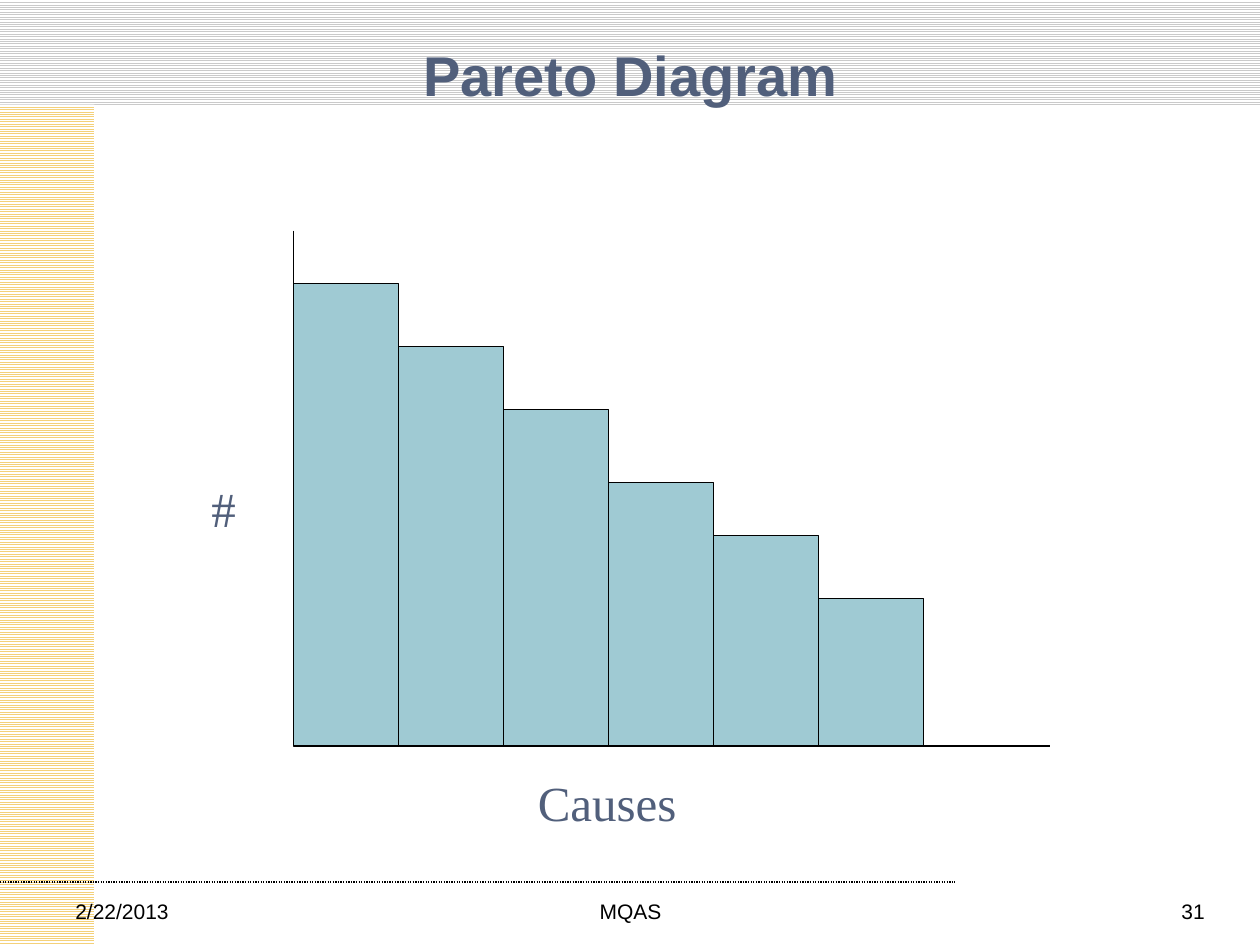
from lxml import etree
from pptx import Presentation
from pptx.dml.color import RGBColor
from pptx.enum.dml import MSO_LINE, MSO_PATTERN
from pptx.enum.shapes import MSO_CONNECTOR, MSO_SHAPE
from pptx.enum.text import MSO_ANCHOR, PP_ALIGN
from pptx.oxml.ns import qn
from pptx.util import Inches, Pt

RECT = MSO_SHAPE.RECTANGLE
STRAIGHT = MSO_CONNECTOR.STRAIGHT
STRIPES = MSO_PATTERN.LIGHT_HORIZONTAL
DOTS = MSO_LINE.ROUND_DOT
LEFT, CENTER, RIGHT = PP_ALIGN.LEFT, PP_ALIGN.CENTER, PP_ALIGN.RIGHT
TOP, MIDDLE = MSO_ANCHOR.TOP, MSO_ANCHOR.MIDDLE
SLATE, BLACK, WHITE, TEAL = "515F7B", "000000", "FFFFFF", "9FCAD3"
SANS, SERIF = "Arial", "Times New Roman"


def color(code):
    return RGBColor.from_string(code)


prs = Presentation()
prs.slide_width, prs.slide_height = Inches(10), Inches(7.5)
slide = prs.slides.add_slide(prs.slide_layouts[6])
shapes = slide.shapes

# Striped bands along the top and left edges
for top, width, height, ink in [(0, 10, 0.83, "CACACA"), (0.83, 0.75, 6.67, "F4D17A")]:
    band = shapes.add_shape(RECT, 0, Inches(top), Inches(width), Inches(height))
    band.shadow.inherit = False
    band.fill.patterned()
    band.fill.pattern = STRIPES
    band.fill.fore_color.rgb = color(ink)
    band.fill.back_color.rgb = color(WHITE)
    band.line.fill.background()

# Footer rule, then the two axes
x0, base = 2.33, 5.92
for x1, y1, x2, y2, weight, dash in [
    (0, 7, 7.58, 7, 0.75, DOTS),
    (x0, 1.83, x0, base, 1, None),
    (x0, base, 8.33, base, 1, None),
]:
    line = shapes.add_connector(STRAIGHT, Inches(x1), Inches(y1), Inches(x2), Inches(y2))
    line.line.color.rgb = color(BLACK)
    line.line.width = Pt(weight)
    line.line.dash_style = dash
    etree.SubElement(line._element.spPr, qn("a:effectLst"))

# Bars, tallest first, standing side by side on the base line
step = 5 / 6
for i, top in enumerate([2.25, 2.75, 3.25, 3.83, 4.25, 4.75]):
    bar = shapes.add_shape(
        RECT, Inches(x0 + i * step), Inches(top), Inches(step), Inches(base - top)
    )
    bar.shadow.inherit = False
    bar.fill.solid()
    bar.fill.fore_color.rgb = color(TEAL)
    bar.line.color.rgb = color(BLACK)
    bar.line.width = Pt(1)

# Title, axis labels and footer
for text, x, y, width, height, size, font, ink, align, anchor in [
    ("Pareto Diagram", 1.08, 0.25, 7.85, 0.67, 32, SANS, SLATE, CENTER, MIDDLE),
    ("Causes", 4.17, 6.08, 2.17, 0.57, 28, SERIF, SLATE, LEFT, TOP),
    ("#", 1.58, 3.75, 0.5, 0.57, 28, SERIF, SLATE, LEFT, TOP),
    ("2/22/2013", 0.5, 7.08, 2.33, 0.27, 12, SANS, BLACK, LEFT, TOP),
    ("MQAS", 3.42, 7.08, 3.17, 0.27, 12, SANS, BLACK, CENTER, TOP),
    ("31", 7.33, 7.08, 2.33, 0.27, 12, SANS, BLACK, RIGHT, TOP),
]:
    box = shapes.add_textbox(Inches(x), Inches(y), Inches(width), Inches(height))
    frame = box.text_frame
    frame.word_wrap = True
    frame.vertical_anchor = anchor
    para = frame.paragraphs[0]
    para.alignment = align
    run = para.add_run()
    run.text = text
    run.font.size = Pt(size)
    run.font.name = font
    run.font.bold = size == 32
    run.font.color.rgb = color(ink)

prs.save("out.pptx")
